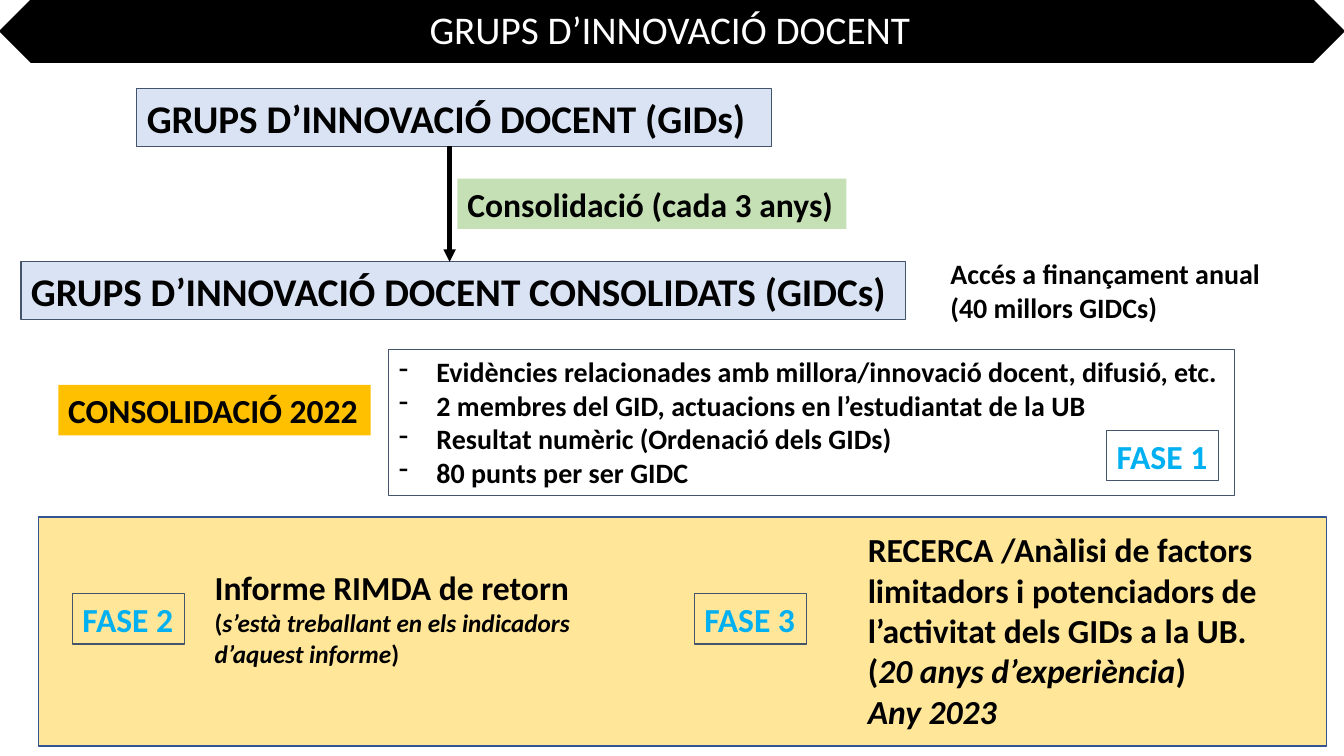
from lxml.etree import SubElement
from pptx import Presentation
from pptx.dml.color import RGBColor
from pptx.enum.shapes import MSO_CONNECTOR, MSO_SHAPE
from pptx.enum.text import MSO_ANCHOR, MSO_AUTO_SIZE, PP_ALIGN
from pptx.oxml.ns import qn
from pptx.util import Cm, Pt

FONT = "Calibri"
BLACK, WHITE, CYAN = "000000", "FFFFFF", "00B0F0"
PALE_BLUE, GREEN, ORANGE, SAND = "DAE3F3", "C5E0B4", "FFC000", "FFE699"
SLATE, BLUE = "44546A", "325491"


def color(hex_string):
    return RGBColor.from_string(hex_string)


def add_box(slide, place, fill=None, line=None, line_width=0.75, kind=MSO_SHAPE.RECTANGLE):
    """Preset shape; place is left, top, width, height in centimetres."""
    shape = slide.shapes.add_shape(kind, *map(Cm, place))
    shape.shadow.inherit = False
    if fill:
        shape.fill.solid()
        shape.fill.fore_color.rgb = color(fill)
    else:
        shape.fill.background()
    if line:
        shape.line.color.rgb = color(line)
        shape.line.width = Pt(line_width)
    else:
        shape.line.fill.background()
    return shape


def format_text(shape, size, font_color=BLACK, bold=True, wrap=False):
    frame = shape.text_frame
    frame.word_wrap = wrap
    frame.auto_size = MSO_AUTO_SIZE.SHAPE_TO_FIT_TEXT
    frame.vertical_anchor = MSO_ANCHOR.TOP
    for paragraph in frame.paragraphs:
        paragraph.alignment = PP_ALIGN.LEFT
        paragraph.line_spacing = 1.0
        paragraph.space_before = Pt(0)
        for run in paragraph.runs:
            run.font.name = FONT
            run.font.size = Pt(size)
            run.font.bold = bold
            run.font.color.rgb = color(font_color)


def add_label(slide, place, text, size, fill=None, line=None, font_color=BLACK, wrap=False):
    label = add_box(slide, place, fill, line)
    label.text_frame.text = text
    format_text(label, size, font_color, wrap=wrap)
    return label


def add_text(slide, place, paragraphs, size):
    """Text box; each paragraph is a list of (text, italic) runs."""
    box = slide.shapes.add_textbox(*map(Cm, place))
    frame = box.text_frame
    for index, runs in enumerate(paragraphs):
        paragraph = frame.add_paragraph() if index else frame.paragraphs[0]
        for text, italic in runs:
            run = paragraph.add_run()
            run.text = text
            run.font.italic = italic
    format_text(box, size, wrap=True)
    return box


def add_dashes(shape, indent):
    for paragraph in shape.text_frame.paragraphs:
        properties = paragraph._p.get_or_add_pPr()
        properties.set("marL", str(Cm(indent)))
        properties.set("indent", str(-Cm(indent)))
        SubElement(properties, qn("a:buFontTx"))
        SubElement(properties, qn("a:buChar"), char="-")


def add_arrow(slide, x, top, bottom):
    arrow = slide.shapes.add_connector(
        MSO_CONNECTOR.STRAIGHT, Cm(x), Cm(top), Cm(x), Cm(bottom))
    arrow.line.color.rgb = color(BLACK)
    arrow.line.width = Pt(3)
    SubElement(arrow.line._get_or_add_ln(), qn("a:tailEnd"), type="triangle")
    SubElement(arrow._element.spPr, qn("a:effectLst"))


def add_title(slide, place, text):
    title = slide.shapes.title
    title.left, title.top, title.width, title.height = map(Cm, place)
    title.text_frame.text = text
    format_text(title, 28, WHITE, bold=False)
    # Bring the title in front of the banner
    slide.shapes[-1].element.addnext(title.element)


def main():
    presentation = Presentation()
    presentation.slide_width, presentation.slide_height = Cm(33.87), Cm(19.05)
    slide = presentation.slides.add_slide(presentation.slide_layouts[5])

    # Lower panel, banner and title
    add_box(slide, (0.97, 13.03, 32.46, 5.77), SAND, BLUE, 1)
    banner = add_box(slide, (0, 0, 33.87, 1.57), BLACK, BLACK, 1,
                     MSO_SHAPE.SNIP_2_DIAG_RECTANGLE)
    banner.adjustments[0] = banner.adjustments[1] = 0.5
    add_title(slide, (10.57, 0, 12.75, 2.24), "GRUPS D’INNOVACIÓ DOCENT")

    # From groups to consolidated groups
    add_label(slide, (3.45, 2.24, 16, 1.45), "GRUPS D’INNOVACIÓ DOCENT (GIDs)",
              28, PALE_BLUE, SLATE, wrap=True)
    add_label(slide, (0.53, 6.6, 22.28, 1.45),
              "GRUPS D’INNOVACIÓ DOCENT CONSOLIDATS (GIDCs)",
              28, PALE_BLUE, SLATE, wrap=True)
    add_arrow(slide, 11.33, 3.68, 6.6)
    add_label(slide, (11.53, 4.5, 9.8, 1.27), "Consolidació (cada 3 anys)", 24, GREEN)
    add_text(slide, (23.7, 6.35, 8.38, 1.96),
             [[("Accés a finançament anual", False)], [("(40 millors GIDCs)", False)]], 20)

    # Consolidation criteria
    add_label(slide, (1.47, 9.7, 7.87, 1.27), "CONSOLIDACIÓ 2022", 24, ORANGE)
    criteria = add_label(slide, (9.8, 8.81, 21.31, 3.68), "\n".join([
        "Evidències relacionades amb millora/innovació docent, difusió, etc.",
        "2 membres del GID, actuacions en l’estudiantat de la UB",
        "Resultat numèric (Ordenació dels GIDs)",
        "80 punts per ser GIDC",
    ]), 20, line=SLATE)
    add_dashes(criteria, 0.95)

    # Phase tags
    for number, (left, top) in enumerate([(27.89, 10.85), (1.83, 14.96), (17.5, 14.96)], 1):
        add_label(slide, (left, top, 2.82, 1.27), f"FASE {number}", 24,
                  line=SLATE, font_color=CYAN)

    # Phase descriptions
    report = add_text(slide, (5.16, 14.17, 10.8, 2.82), [
        [("Informe RIMDA de retorn", False)],
        [("(", False), ("s’està treballant en els indicadors d’aquest informe", True),
         (")", False)],
    ], 24)
    for run in report.text_frame.paragraphs[1].runs:
        run.font.size = Pt(18)
    add_text(slide, (21.62, 13.21, 10.8, 5.38), [
        [("RECERCA /Anàlisi de factors limitadors i potenciadors de "
          "l’activitat dels GIDs a la UB. (", False),
         ("20 anys d’experiència", True), (")", False)],
        [("Any 2023", True)],
    ], 24)

    presentation.save("out.pptx")


if __name__ == "__main__":
    main()
